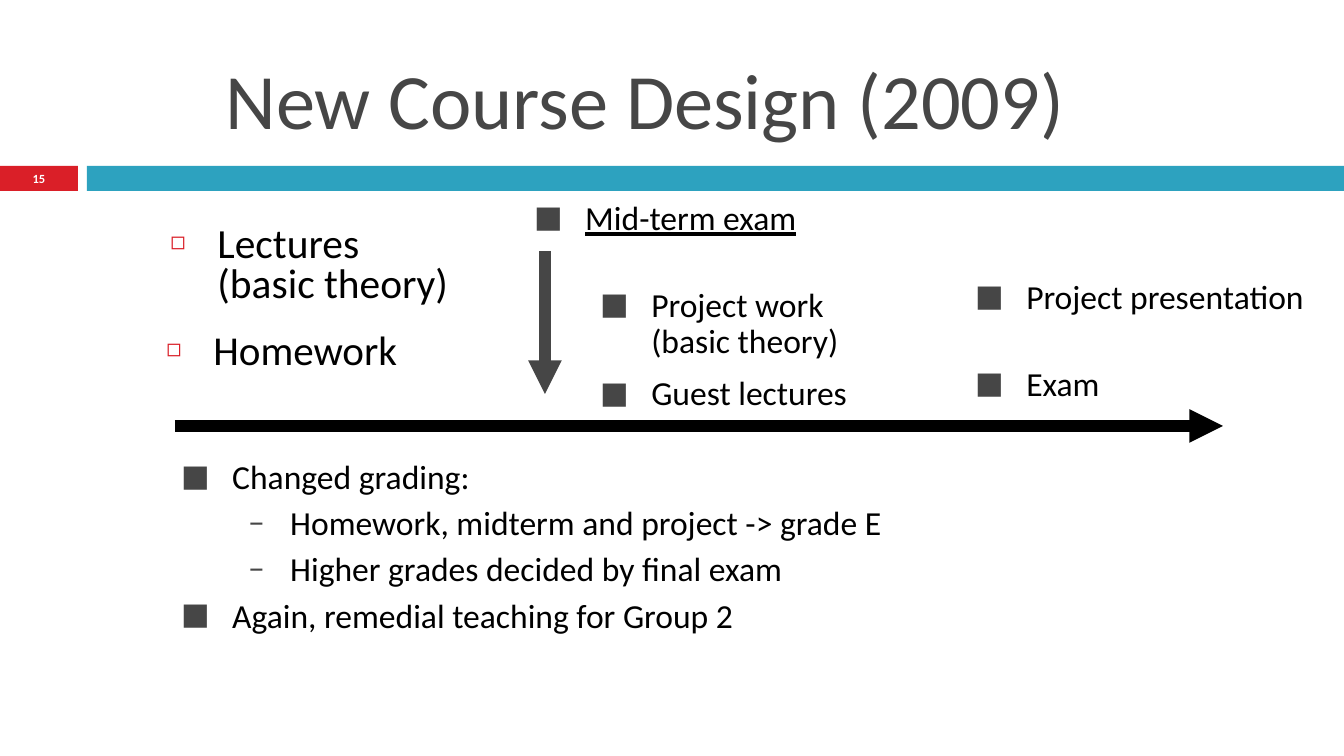
from lxml.etree import SubElement
from pptx import Presentation
from pptx.dml.color import RGBColor
from pptx.enum.shapes import MSO_CONNECTOR, MSO_SHAPE
from pptx.enum.text import MSO_ANCHOR, MSO_AUTO_SIZE, PP_ALIGN
from pptx.oxml.ns import qn
from pptx.util import Emu, Pt

FONT = "Calibri"
RED = RGBColor(0xDA, 0x1F, 0x28)
TEAL = RGBColor(0x2D, 0xA2, 0xBF)
GRAY = RGBColor(0x46, 0x46, 0x46)
BLACK = RGBColor(0, 0, 0)
WHITE = RGBColor(0xFF, 0xFF, 0xFF)

# Bullet styles: character, colour, size in percent, left margin, hanging indent
OUTLINE = ("◻", RED, 60, 47, 47)
SQUARE = ("■", GRAY, 90, 51, 51)
DASH = ("–", GRAY, 100, 109, 42)


def px(n):
    return Emu(round(n * 914400 / 134.4))


def place(sp, box):
    sp.left, sp.top, sp.width, sp.height = map(px, box)


def add_run(p, text, size, color, bold=False, underline=False):
    r = p.add_run()
    r.text = text
    f = r.font
    f.name, f.size, f.bold, f.underline = FONT, Pt(size), bold, underline
    f.color.rgb = color


def set_bullet(p, style):
    char, color, percent, margin, hanging = style
    pPr = p._p.get_or_add_pPr()
    pPr.set("marL", str(px(margin)))
    pPr.set("indent", str(-px(hanging)))
    SubElement(SubElement(pPr, qn("a:buClr")), qn("a:srgbClr"), val=str(color))
    SubElement(pPr, qn("a:buSzPct"), val=str(percent * 1000))
    SubElement(pPr, qn("a:buFont"), typeface=FONT)
    SubElement(pPr, qn("a:buChar"), char=char)


def fill_list(sp, items, size, spacing, before, underline=False):
    """Write (text, bullet style) items; a newline is a line break."""
    tf = sp.text_frame
    tf.word_wrap = True
    tf.auto_size = MSO_AUTO_SIZE.NONE
    tf.vertical_anchor = MSO_ANCHOR.TOP
    for i, (text, style) in enumerate(items):
        p = tf.paragraphs[0] if i == 0 else tf.add_paragraph()
        p.level = 1 if style is DASH else 0
        p.line_spacing = spacing
        p.space_before = Pt(before)
        set_bullet(p, style)
        for j, line in enumerate(text.split("\n")):
            if j:
                p.add_line_break()
            add_run(p, line, size, BLACK, underline=underline)


def add_list(slide, box, items, spacing=0.9, underline=False):
    sp = slide.shapes.add_textbox(*map(px, box))
    fill_list(sp, items, 18, spacing, 3.2, underline)


def add_bar(slide, box, color):
    sp = slide.shapes.add_shape(MSO_SHAPE.RECTANGLE, *map(px, box))
    sp.shadow.inherit = False
    sp.fill.solid()
    sp.fill.fore_color.rgb = color
    sp.line.fill.background()


def add_arrow(slide, ends, color):
    cxn = slide.shapes.add_connector(MSO_CONNECTOR.STRAIGHT, *map(px, ends))
    cxn.line.color.rgb = color
    cxn.line.width = Pt(6)
    SubElement(cxn.line._get_or_add_ln(), qn("a:tailEnd"), type="triangle")
    SubElement(cxn._element.spPr, qn("a:effectLst"))


def add_page_number(slide, box, text):
    tf = slide.shapes.add_textbox(*map(px, box)).text_frame
    tf.word_wrap = True
    tf.margin_top = tf.margin_bottom = 0
    tf.vertical_anchor = MSO_ANCHOR.MIDDLE
    p = tf.paragraphs[0]
    p.alignment = PP_ALIGN.CENTER
    add_run(p, text, 6.7, WHITE, bold=True)


def set_title(slide, box, text):
    sp = slide.shapes.title
    place(sp, box)
    tf = sp.text_frame
    tf.auto_size = MSO_AUTO_SIZE.NONE
    tf.vertical_anchor = MSO_ANCHOR.BOTTOM
    p = tf.paragraphs[0]
    p.alignment = PP_ALIGN.LEFT
    add_run(p, text, 42, GRAY)


def main():
    prs = Presentation()
    prs.slide_width, prs.slide_height = px(1344), px(756)
    slide = prs.slides.add_slide(prs.slide_layouts[3])

    # Header band and title
    add_bar(slide, (0, 166, 78, 25), RED)
    add_bar(slide, (87, 166, 1257, 25), TEAL)
    add_page_number(slide, (0, 165, 78, 27), "15")
    set_title(slide, (212, 30, 1098, 122), "New Course Design (2009)")

    # First half of the course
    lectures, homework = slide.placeholders[1], slide.placeholders[2]
    place(lectures, (157, 220, 382, 93))
    fill_list(lectures, [("Lectures\n(basic theory)", OUTLINE)], 22.2, 0.8, 7)
    place(homework, (153, 323, 382, 93))
    fill_list(homework, [("Homework", OUTLINE)], 22, 0.9, 7)

    # Timeline and mid-term marker
    add_arrow(slide, (175, 426, 1223, 426), BLACK)
    add_arrow(slide, (545, 251, 545, 394), GRAY)
    add_list(slide, (521, 195, 382, 93), [("Mid-term exam", SQUARE)],
             underline=True)

    # Second half and end of the course
    for left, top, height, text in (
        (587, 282, 93, "Project work\n(basic theory)"),
        (587, 370, 38, "Guest lectures"),
        (962, 274, 93, "Project presentation"),
        (962, 361, 93, "Exam"),
    ):
        add_list(slide, (left, top, 382, height), [(text, SQUARE)])

    # Grading notes
    add_list(slide, (168, 449, 1142, 231), [
        ("Changed grading:", SQUARE),
        ("Homework, midterm and project -> grade E", DASH),
        ("Higher grades decided by final exam", DASH),
        ("Again, remedial teaching for Group 2", SQUARE),
    ], spacing=1.0)

    prs.save("out.pptx")


if __name__ == "__main__":
    main()
